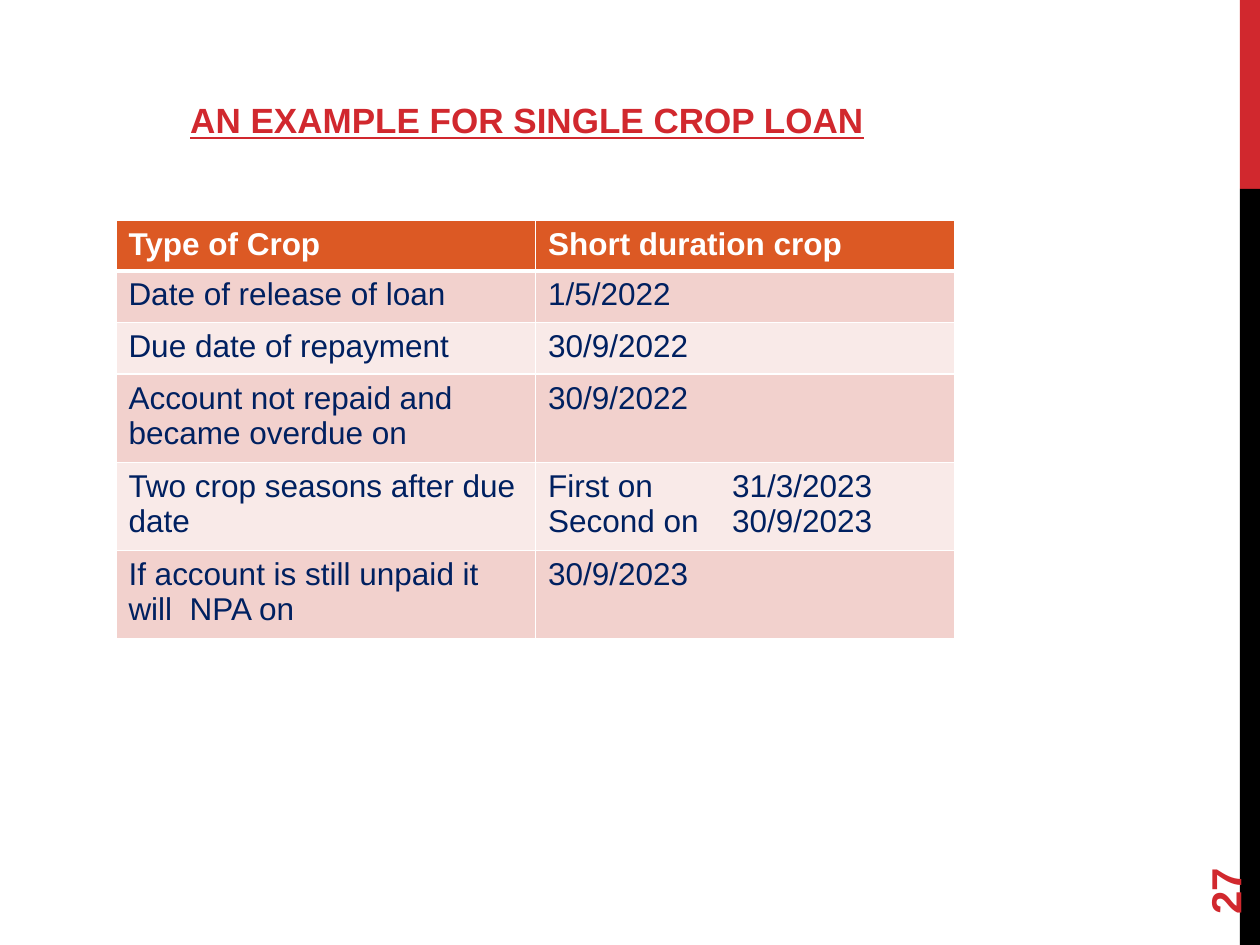
from lxml.etree import SubElement
from pptx import Presentation
from pptx.dml.color import RGBColor
from pptx.enum.shapes import MSO_SHAPE
from pptx.enum.text import MSO_ANCHOR, PP_ALIGN
from pptx.oxml import parse_xml
from pptx.oxml.ns import nsdecls, qn
from pptx.util import Inches, Pt

COLORS = {
    "red": "D1282E",
    "black": "000000",
    "white": "FFFFFF",
    "navy": "002060",
    "header": "DC5924",
    "dark_band": "F2D1CD",
    "light_band": "F9EAE8",
}


def set_font(p, size, color, bold=False):
    p.font.name = "Arial"
    p.font.size = Pt(size)
    p.font.bold = bold
    p.font.color.rgb = RGBColor.from_string(COLORS[color])


def set_borders(cell, top, bottom):
    """Draw white cell borders: 1 pt at the sides, the given points above and below."""
    tcPr = cell._tc.get_or_add_tcPr()
    widths = {"lnL": 1, "lnR": 1, "lnT": top, "lnB": bottom}
    for i, (side, width) in enumerate(widths.items()):
        tcPr.insert(i, parse_xml(
            f'<a:{side} {nsdecls("a")} w="{Pt(width)}"><a:solidFill>'
            f'<a:srgbClr val="{COLORS["white"]}"/></a:solidFill></a:{side}>'))


prs = Presentation()
prs.slide_width, prs.slide_height = Inches(10), Inches(7.5)
s = prs.slides.add_slide(prs.slide_layouts[5])

# Side bar
for color, top, height in (("red", 0, 1.5), ("black", 1.5, 6)):
    sp = s.shapes.add_shape(MSO_SHAPE.RECTANGLE, Inches(9.84), Inches(top),
                            Inches(0.16), Inches(height))
    sp.shadow.inherit = False
    sp.fill.solid()
    sp.fill.fore_color.rgb = RGBColor.from_string(COLORS[color])
    sp.line.fill.background()

# Title
title = s.shapes.title
title.left, title.top = Inches(1.41), Inches(0.7)
title.width, title.height = Inches(6), Inches(0.5)
tf = title.text_frame
tf.text = "AN EXAMPLE FOR SINGLE CROP LOAN"
tf.vertical_anchor = MSO_ANCHOR.MIDDLE
p = tf.paragraphs[0]
p.alignment = PP_ALIGN.LEFT
set_font(p, 20, "red", bold=True)
p.font.underline = True

# Slide number
number = s.shapes.add_textbox(Inches(9), Inches(6.44), Inches(1.44), Inches(0.4))
number.rotation = 270
tf = number.text_frame
tf.word_wrap = True
tf.vertical_anchor = MSO_ANCHOR.MIDDLE
tf.text = "27"
set_font(tf.paragraphs[0], 24, "red", bold=True)

# Crop loan table
rows = [
    ("Type of Crop", "Short duration crop", 0.4),
    ("Date of release of loan", "1/5/2022", 0.41),
    ("Due date of repayment", "30/9/2022", 0.41),
    ("Account not repaid and became overdue on", "30/9/2022", 0.66),
    ("Two crop seasons after due date",
     "First on\t31/3/2023\nSecond on\t30/9/2023", 0.66),
    ("If account is still unpaid it will  NPA on", "30/9/2023", 0.66),
]
table = s.shapes.add_table(len(rows), 2, Inches(0.92), Inches(1.75),
                           Inches(6.66), Inches(3.2)).table
for column in table.columns:
    column.width = Inches(3.33)
for i, (*texts, height) in enumerate(rows):
    table.rows[i].height = Inches(height)
    is_header = i == 0
    fill = "header" if is_header else "dark_band" if i % 2 else "light_band"
    for j, text in enumerate(texts):
        cell = table.cell(i, j)
        cell.fill.solid()
        cell.fill.fore_color.rgb = RGBColor.from_string(COLORS[fill])
        set_borders(cell, top=3 if i == 1 else 1, bottom=3 if is_header else 1)
        cell.text = text
        for p in cell.text_frame.paragraphs:
            set_font(p, 18, "white" if is_header else "navy", bold=is_header)
            if "\t" in text:
                tabs = parse_xml(f'<a:tabLst {nsdecls("a")}/>')
                SubElement(tabs, qn("a:tab"), pos=str(Inches(1.46)), algn="l")
                p._p.get_or_add_pPr().insert(0, tabs)

prs.save("out.pptx")
